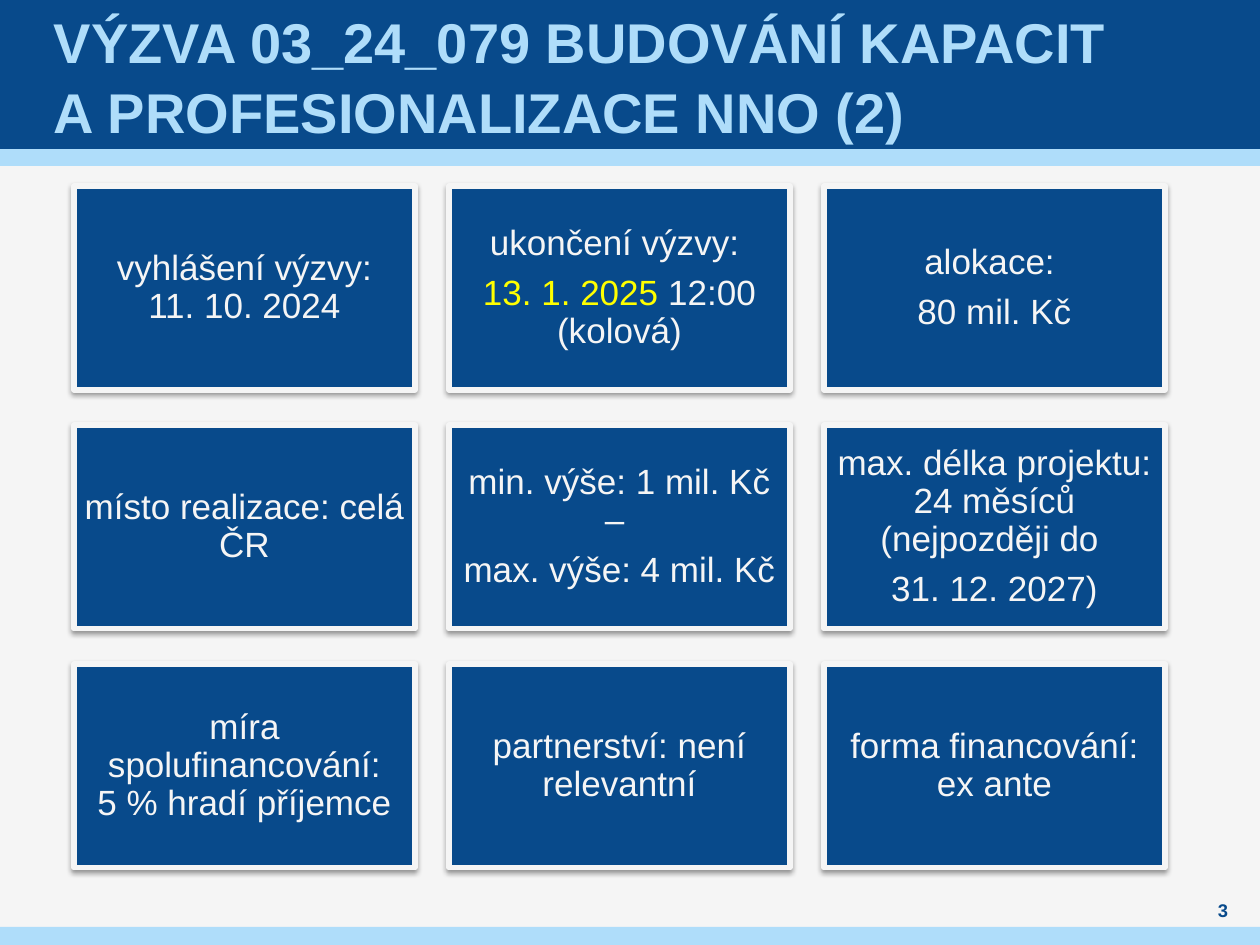
import pptx
import pptx.util
import pptx.dml.color
import pptx.enum.shapes
import pptx.enum.text
import pptx.oxml
import pptx.oxml.ns

RGB = pptx.dml.color.RGBColor
NAVY = RGB(0x08, 0x4A, 0x8B)
SKY = RGB(0xAF, 0xDD, 0xFA)
PALE = RGB(0xF5, 0xF5, 0xF5)
GOLD = RGB(0xFF, 0xFF, 0x00)

TITLE = "VÝZVA 03_24_079 BUDOVÁNÍ KAPACIT\nA PROFESIONALIZACE NNO (2)"
PAGE = "3"
CARDS = [
    [[("vyhlášení výzvy:\n11. 10. 2024", PALE)]],
    [[("ukončení výzvy: ", PALE)],
     [("13. 1. 2025 ", GOLD), ("12:00 (kolová)", PALE)]],
    [[("alokace: ", PALE)], [("80 mil.\u00a0Kč", PALE)]],
    [[("místo realizace: celá ČR", PALE)]],
    [[("min. výše: 1 mil. Kč – ", PALE)], [("max. výše: 4 mil. Kč", PALE)]],
    [[("max. délka projektu: 24 měsíců (nejpozději do ", PALE)],
     [("31. 12. 2027)", PALE)]],
    [[("míra spolufinancování:\n5 % hradí příjemce", PALE)]],
    [[("partnerství: není relevantní", PALE)]],
    [[("forma financování: ex ante", PALE)]],
]
BANDS = [(149, 17, SKY), (0, 149, NAVY), (927, 18, SKY)]
LEFT, TOP, WIDE, HIGH = 74, 186, 341, 204
STEP_X, STEP_Y, COLS = 375, 239, 3

SHADOW = (
    '<a:effectLst %s><a:outerShdw blurRad="39370" dist="20320" dir="5400000" '
    'rotWithShape="0"><a:srgbClr val="000000"><a:alpha val="38000"/>'
    '</a:srgbClr></a:outerShdw></a:effectLst>' % pptx.oxml.ns.nsdecls("a")
)


def px(n):
    return pptx.util.Emu(round(n * 914400 / 126))


def add_rect(slide, x, y, w, h, color):
    kind = pptx.enum.shapes.MSO_SHAPE.RECTANGLE
    rect = slide.shapes.add_shape(kind, px(x), px(y), px(w), px(h))
    rect.shadow.inherit = False
    rect.fill.solid()
    rect.fill.fore_color.rgb = color
    rect.line.fill.background()
    return rect


def add_box(slide, x, y, w, h):
    return slide.shapes.add_textbox(px(x), px(y), px(w), px(h))


def write(shape, paras, size, side, edge, align, bold=False, space=1.0, after=0):
    frame = shape.text_frame
    frame.word_wrap = True
    frame.vertical_anchor = pptx.enum.text.MSO_ANCHOR.MIDDLE
    frame.margin_left = frame.margin_right = px(side)
    frame.margin_top = frame.margin_bottom = px(edge)
    for i, runs in enumerate(paras):
        para = frame.add_paragraph() if i else frame.paragraphs[0]
        para.alignment = align
        para.line_spacing = space
        para.space_after = pptx.util.Pt(after)
        for text, color in runs:
            for j, line in enumerate(text.split("\n")):
                if j:
                    para.add_line_break()
                run = para.add_run()
                run.text = line
                font = run.font
                font.name = "Arial"
                font.size = pptx.util.Pt(size)
                font.bold = bold
                font.color.rgb = color


def main():
    deck = pptx.Presentation()
    deck.slide_width, deck.slide_height = px(1260), px(945)
    slide = deck.slides.add_slide(deck.slide_layouts[6])
    slide.background.fill.solid()
    slide.background.fill.fore_color.rgb = PALE
    align = pptx.enum.text.PP_ALIGN

    for y, h, color in BANDS:
        add_rect(slide, 0, y, 1260, h, color)
    title = add_box(slide, 49, 0, 1160, 149)
    write(title, [[(TITLE, SKY)]], 32, 5, 0, align.LEFT, True, 1.04)
    page = add_box(slide, 1191, 898, 64, 25)
    write(page, [[(PAGE, NAVY)]], 10.5, 0, 0, align.CENTER, True)

    for i, paras in enumerate(CARDS):
        row, col = divmod(i, COLS)
        card = add_rect(slide, LEFT + col * STEP_X, TOP + row * STEP_Y,
                        WIDE, HIGH, NAVY)
        card.line.color.rgb = PALE
        card.line.width = pptx.util.Pt(3)
        props = card._element.spPr
        old = props.find(pptx.oxml.ns.qn("a:effectLst"))
        props.replace(old, pptx.oxml.parse_xml(SHADOW))
        write(card, paras, 20, 10, 10, align.CENTER, space=0.9, after=7)

    deck.save("out.pptx")


if __name__ == "__main__":
    main()
